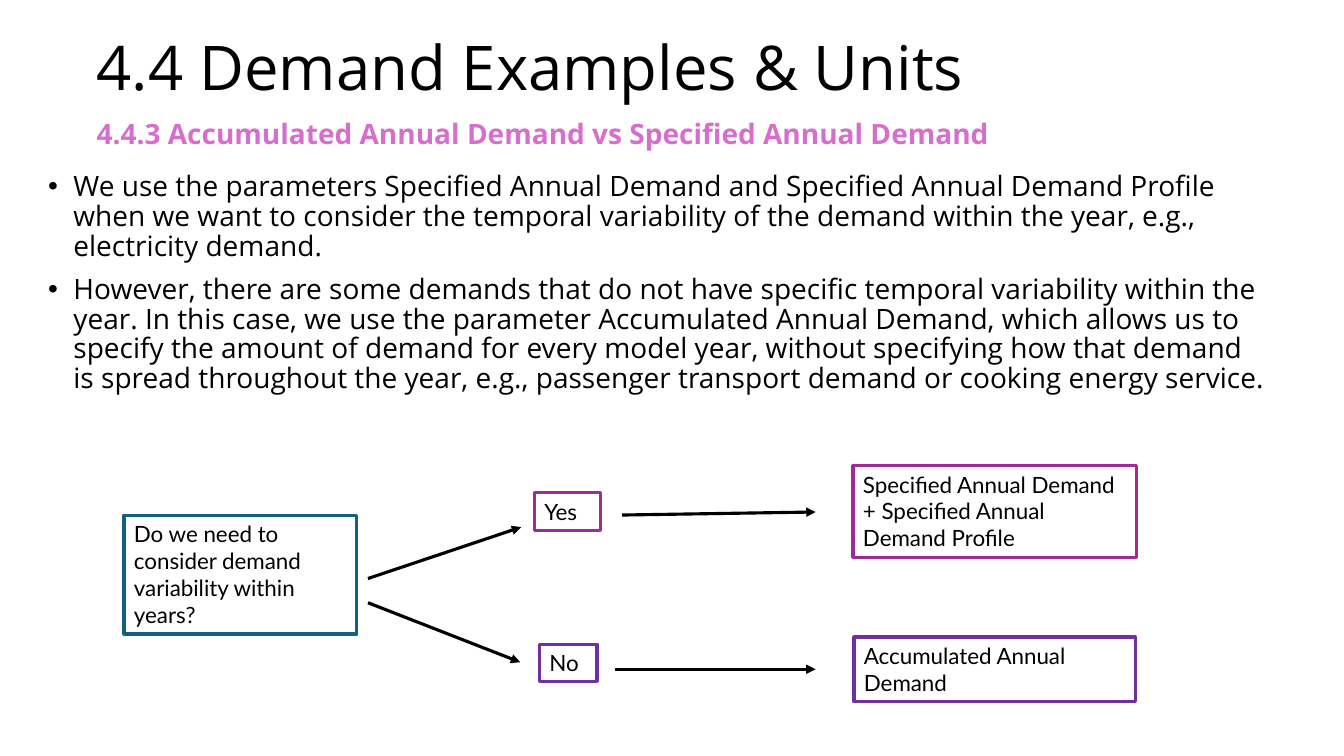
from dataclasses import dataclass
from typing import NamedTuple, Optional

from lxml.etree import SubElement
from pptx import Presentation
from pptx.dml.color import RGBColor
from pptx.enum.shapes import MSO_CONNECTOR, MSO_SHAPE
from pptx.enum.text import MSO_ANCHOR, PP_ALIGN
from pptx.oxml.ns import qn
from pptx.util import Inches, Length, Pt


@dataclass(frozen=True)
class Theme:
    black: str = "000000"
    white: str = "FFFFFF"
    pink: str = "D86ECC"
    teal: str = "156082"
    magenta: str = "A02B93"
    purple: str = "7030A0"
    text_font: str = "Open Sans"
    box_font: str = "Lato"
    title_size: float = 44
    text_size: float = 20
    box_size: float = 16
    line_width: float = 2.25


class Area(NamedTuple):
    """Left, top, width and height in percent of the slide."""
    x: float
    y: float
    w: float
    h: float


class Text(NamedTuple):
    area: Area
    paragraphs: tuple[str, ...]
    size: float
    color: str
    bold: bool = False
    bullet: bool = False
    spacing: Optional[float] = None
    anchor: MSO_ANCHOR = MSO_ANCHOR.TOP


class Box(NamedTuple):
    area: Area
    text: str
    color: str
    fill: Optional[str] = None


class Arrow(NamedTuple):
    x1: float
    y1: float
    x2: float
    y2: float


T = Theme()
WIDTH, HEIGHT = Inches(13.33), Inches(7.5)

TEXTS = (
    Text(Area(6.45, 14.8, 76.44, 5.87),
         ("4.4.3 Accumulated Annual Demand vs Specified Annual Demand",),
         T.text_size, T.pink, bold=True),
    Text(Area(6.45, -5.6, 81.32, 20), ("4.4 Demand Examples & Units",),
         T.title_size, T.black, spacing=0.9, anchor=MSO_ANCHOR.BOTTOM),
    Text(Area(2.85, 22.27, 92.27, 63.47),
         ("We use the parameters Specified Annual Demand and Specified Annual "
          "Demand Profile when we want to consider the temporal variability of "
          "the demand within the year, e.g., electricity demand.",
          "However, there are some demands that do not have specific temporal "
          "variability within the year. In this case, we use the parameter "
          "Accumulated Annual Demand, which allows us to specify the amount of "
          "demand for every model year, without specifying how that demand is "
          "spread throughout the year, e.g., passenger transport demand or "
          "cooking energy service."),
         T.text_size, T.black, bullet=True, spacing=0.88),
)

BOXES = (
    Box(Area(63.47, 61.6, 21.08, 12.13),
        "Specified Annual Demand + Specified Annual Demand Profile",
        T.magenta, T.white),
    Box(Area(63.54, 84.27, 20.93, 8.53), "Accumulated Annual Demand", T.purple),
    Box(Area(9.23, 68.13, 17.33, 15.73),
        "Do we need to consider demand variability within years?",
        T.teal, T.white),
    Box(Area(39.76, 65.2, 4.95, 4.93), "Yes", T.magenta, T.white),
    Box(Area(40.14, 85.2, 4.28, 4.93), "No", T.purple, T.white),
)

ARROWS = (
    Arrow(27.38, 76.53, 38.78, 69.73),
    Arrow(27.38, 79.73, 38.71, 87.6),
    Arrow(46.29, 68.13, 60.69, 67.73),
    Arrow(45.76, 88.53, 60.69, 88.53),
)


def across(share: float) -> Length:
    return Length(round(WIDTH * share / 100))


def down(share: float) -> Length:
    return Length(round(HEIGHT * share / 100))


def place(area: Area) -> tuple[Length, Length, Length, Length]:
    return across(area.x), down(area.y), across(area.w), down(area.h)


def add_run(p, text: str, font: str, size: float, color: str,
            bold: bool = False) -> None:
    r = p.add_run()
    r.text = text
    r.font.name = font
    r.font.size = Pt(size)
    r.font.bold = bold
    r.font.color.rgb = RGBColor.from_string(color)


def add_bullet(p) -> None:
    pPr = p._p.get_or_add_pPr()
    pPr.set("marL", str(Inches(0.25)))
    pPr.set("indent", str(-Inches(0.25)))
    SubElement(pPr, qn("a:buFont")).set("typeface", "Arial")
    SubElement(pPr, qn("a:buChar")).set("char", "•")


def add_text(s, text: Text) -> None:
    tf = s.shapes.add_textbox(*place(text.area)).text_frame
    tf.word_wrap = True
    tf.vertical_anchor = text.anchor
    for i, line in enumerate(text.paragraphs):
        p = tf.add_paragraph() if i else tf.paragraphs[0]
        if text.bullet:
            add_bullet(p)
        if text.spacing:
            p.line_spacing = text.spacing
        if i:
            p.space_before = Pt(10)
        add_run(p, line, T.text_font, text.size, text.color, text.bold)


def add_box(s, box: Box) -> None:
    sp = s.shapes.add_shape(MSO_SHAPE.RECTANGLE, *place(box.area))
    sp.shadow.inherit = False
    if box.fill:
        sp.fill.solid()
        sp.fill.fore_color.rgb = RGBColor.from_string(box.fill)
    else:
        sp.fill.background()
    sp.line.color.rgb = RGBColor.from_string(box.color)
    sp.line.width = Pt(T.line_width)
    tf = sp.text_frame
    tf.word_wrap = True
    tf.vertical_anchor = MSO_ANCHOR.TOP
    p = tf.paragraphs[0]
    p.alignment = PP_ALIGN.LEFT
    add_run(p, box.text, T.box_font, T.box_size, T.black)


def add_arrow(s, arrow: Arrow) -> None:
    cxn = s.shapes.add_connector(
        MSO_CONNECTOR.STRAIGHT, across(arrow.x1), down(arrow.y1),
        across(arrow.x2), down(arrow.y2))
    cxn.line.color.rgb = RGBColor.from_string(T.black)
    cxn.line.width = Pt(T.line_width)
    SubElement(cxn.line._get_or_add_ln(), qn("a:tailEnd")).set("type", "triangle")
    SubElement(cxn._element.spPr, qn("a:effectLst"))


def main() -> None:
    prs = Presentation()
    prs.slide_width, prs.slide_height = WIDTH, HEIGHT
    s = prs.slides.add_slide(prs.slide_layouts[6])
    for text in TEXTS:
        add_text(s, text)
    for box in BOXES:
        add_box(s, box)
    for arrow in ARROWS:
        add_arrow(s, arrow)
    prs.save("out.pptx")


if __name__ == "__main__":
    main()
